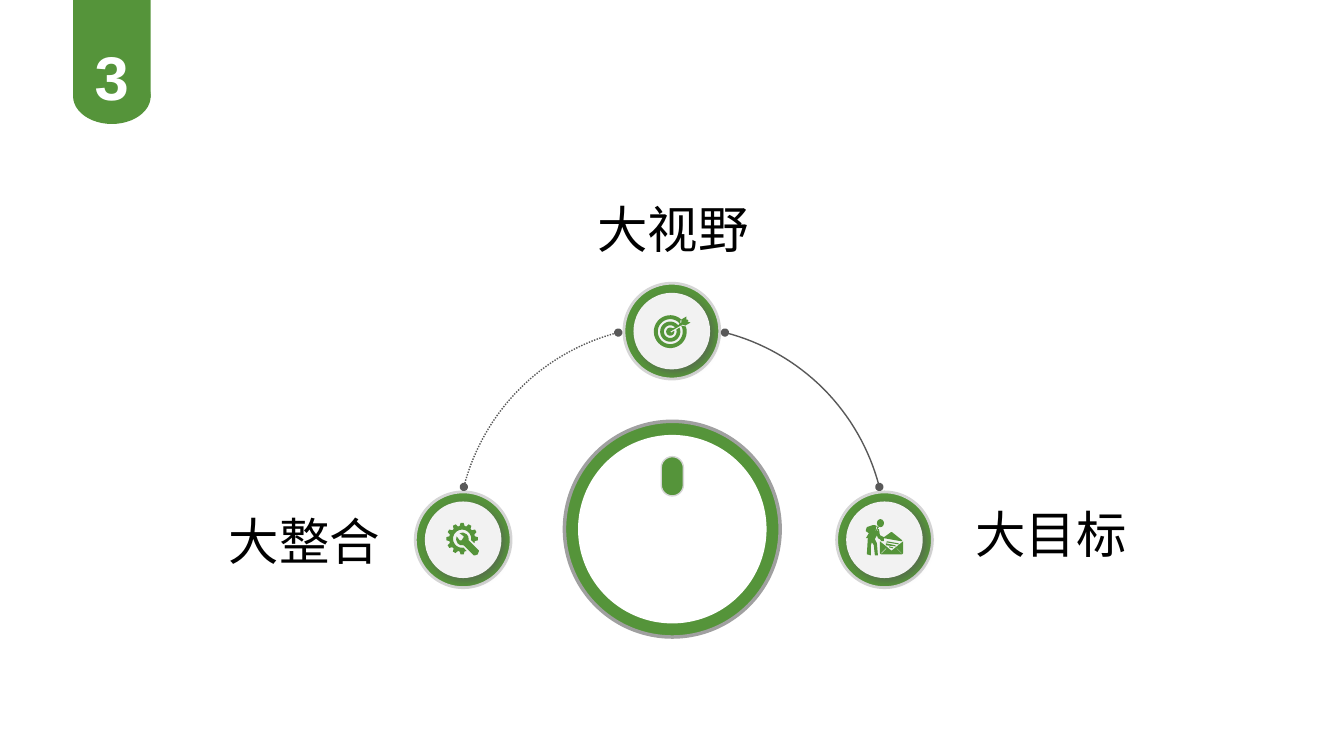
from dataclasses import dataclass
from math import cos, radians, sin

from lxml import etree
from pptx import Presentation
from pptx.dml.color import RGBColor
from pptx.enum.dml import MSO_LINE
from pptx.enum.shapes import MSO_SHAPE
from pptx.enum.text import MSO_AUTO_SIZE, PP_ALIGN
from pptx.oxml.ns import qn
from pptx.util import Pt

OVAL, RECTANGLE, ROUNDED = MSO_SHAPE.OVAL, MSO_SHAPE.RECTANGLE, MSO_SHAPE.ROUNDED_RECTANGLE
LEFT, CENTER, RIGHT = PP_ALIGN.LEFT, PP_ALIGN.CENTER, PP_ALIGN.RIGHT
DOTTED, SOLID = MSO_LINE.ROUND_DOT, MSO_LINE.SOLID
FIT_TEXT = MSO_AUTO_SIZE.SHAPE_TO_FIT_TEXT

COLORS = {
    "green": "55943A", "white": "FFFFFF", "black": "000000", "disc": "F2F2F2",
    "arc": "595959", "hub_edge": "A0A0A0", "node_edge": "D5D5D5",
}
CJK_FONT = "Noto Sans CJK SC"
GRID = 0.72
NODE_SIZE, DISC_SIZE = 68.4, 54.72
ARC_CENTER, ARC_RADIUS = (479.7, 385.9), 153.2

Point = tuple[float, float]
Contour = list[Point]


@dataclass(frozen=True)
class Label:
    text: str
    left: float
    top: float
    width: float
    height: float
    align: PP_ALIGN = LEFT
    spacing: float = 1.0
    size: float = 36
    font: str = CJK_FONT
    color: str = "black"
    bold: bool = False


@dataclass(frozen=True)
class Icon:
    origin: Point
    contours: list[Contour]


@dataclass(frozen=True)
class Arc:
    start: float
    end: float
    dash: MSO_LINE


def arc_points(radius: float, start: float, end: float, steps: int = 32) -> Contour:
    angles = [radians(start + (end - start) * step / steps) for step in range(steps + 1)]
    return [(radius * cos(angle), radius * sin(angle)) for angle in angles]


def polar(radius: float, angle: float) -> Point:
    return radius * cos(radians(angle)), radius * sin(radians(angle))


def gear_contour() -> Contour:
    tooth = [(12.8, 11), (15.7, 5.5), (15.7, -5.5), (12.8, -11)]
    teeth = [polar(radius, offset - 30 * index) for index in range(10) for radius, offset in tooth]
    return [polar(13, 20), *teeth, polar(13, 70), *arc_points(9, 81, 369)]


def target_contour() -> Contour:
    arrow = [(1, 1), (0, 0), (12, -7), (15, -6), (20, -9), (17, -10), (18, -11), (17, -12),
             (16, -12), (16, -15), (11, -12), (11, -9), (10, -8), (10, -11)]
    return [*arc_points(12.4, -29, 318), *arc_points(10, 323, -24), *arc_points(6.3, -18, 319),
            *arc_points(4, 304, -14), *arrow, *arc_points(16.3, 313, -18)]


WRENCH = [(16.5, 12.5), (16.5, 11.5), (6.5, 1.5), (6.2, -2), (4.5, -4.5), (1, -6.2), (-2.5, -5.5),
          (1.5, -2.5), (1.5, -1.5), (-0.5, 1.5), (-2.5, 1.5), (-5.5, -2.5), (-6, 1),
          (-4.5, 4.5), (-2, 6.2), (1.5, 6.5), (11.5, 16.5), (12.5, 16.5), (15.5, 15.5)]
WORKER = [(1, 8), (4, 7), (7, 6), (9, 6), (11, 7), (10, 8), (10, 10), (9, 14), (11, 9), (11, 8),
          (12, 7), (13, 8), (12, 9), (10, 14), (12, 11), (12, 10), (13, 10), (14, 16), (16, 17),
          (18, 18), (25, 13), (26, 13), (36, 21), (36, 22), (35, 22), (18, 19), (18, 22),
          (15, 22), (15, 21), (14, 20), (12, 19), (11, 16), (9, 20), (11, 24), (12, 36), (9, 36),
          (8, 27), (8, 26), (6, 23), (5, 26), (5, 36), (1, 35), (2, 19), (0, 19), (3, 14),
          (0, 12), (0, 11)]
ENVELOPE = [
    [(26, 31), (37, 22), (37, 34), (36, 35), (15, 35), (14, 34), (14, 22), (25, 31)],
    [(30, 29), (35, 34), (36, 34), (31, 29)],
    [(21, 29), (20, 29), (15, 34), (16, 34)],
]
LETTER_LINES = [
    [(21, 22), (32, 24), (33, 25), (32, 25), (20, 23)],
    [(20, 24), (29, 26), (30, 27), (29, 27), (20, 26)],
    [(23, 27), (27, 28), (27, 29), (23, 28)],
]

TARGET_ORIGIN, GEAR_ORIGIN, WORKER_ORIGIN = (478.8, 236.88), (330.12, 384.84), (618.48, 370.8)
ICONS = [
    Icon(TARGET_ORIGIN, [target_contour()]),
    Icon(GEAR_ORIGIN, [gear_contour()]),
    Icon(GEAR_ORIGIN, [WRENCH]),
    Icon(WORKER_ORIGIN, [WORKER]),
    Icon(WORKER_ORIGIN, ENVELOPE),
    *[Icon(WORKER_ORIGIN, [line]) for line in LETTER_LINES],
]
NODE_CENTERS = [(330.84, 385.56), (631.8, 385.56), (479.88, 236.52)]
ARCS = [Arc(194.4, 255.6, DOTTED), Arc(-14.4, -75.6, SOLID)]
LABELS = [
    Label("大视野", 388.08, 125.28, 185.04, 64.08, CENTER, 1.3),
    Label("大目标", 689.76, 355.68, 185.04, 51.12),
    Label("大整合", 93.6, 347.76, 185.04, 64.08, RIGHT, 1.3),
]
NUMBER = Label("3", 60.48, 24.48, 38.88, 60.48, size=44, font="Arial", color="white", bold=True)


def rgb(name: str) -> RGBColor:
    return RGBColor.from_string(COLORS[name])


def add_filled(slide, kind: MSO_SHAPE, center: Point, width: float, height: float,
               fill: str, edge: str = "", edge_width: float = 0):
    left, top = center[0] - width / 2, center[1] - height / 2
    shape = slide.shapes.add_shape(kind, Pt(left), Pt(top), Pt(width), Pt(height))
    shape.shadow.inherit = False
    shape.fill.solid()
    shape.fill.fore_color.rgb = rgb(fill)
    if kind == ROUNDED:
        shape.adjustments[0] = 0.5
    if edge:
        shape.line.color.rgb = rgb(edge)
        shape.line.width = Pt(edge_width)
    else:
        shape.line.fill.background()
    return shape


def add_disc_shadow(shape) -> None:
    effects = shape._element.spPr.find(qn("a:effectLst"))
    shadow = etree.SubElement(effects, qn("a:outerShdw"), blurRad=str(Pt(6)), dist=str(Pt(3)),
                              dir="2700000", algn="tl", rotWithShape="0")
    color = etree.SubElement(shadow, qn("a:srgbClr"), val=COLORS["arc"])
    etree.SubElement(color, qn("a:alpha"), val="64000")


def add_outline(slide, contours: list[Contour], origin: Point, scale: float, close: bool):
    placed = [[(Pt(origin[0] + x * scale), Pt(origin[1] + y * scale)) for x, y in contour]
              for contour in contours]
    builder = slide.shapes.build_freeform(*placed[0][0])
    builder.add_line_segments(placed[0][1:], close=close)
    for contour in placed[1:]:
        builder.move_to(*contour[0])
        builder.add_line_segments(contour[1:], close=close)
    shape = builder.convert_to_shape()
    shape.shadow.inherit = False
    return shape


def add_icon(slide, icon: Icon) -> None:
    shape = add_outline(slide, icon.contours, icon.origin, GRID, True)
    shape.fill.solid()
    shape.fill.fore_color.rgb = rgb("green")
    shape.line.fill.background()


def add_arc(slide, arc: Arc) -> None:
    points = arc_points(ARC_RADIUS, arc.start, arc.end)
    shape = add_outline(slide, [points], ARC_CENTER, 1, False)
    shape.fill.background()
    shape.line.color.rgb = rgb("arc")
    shape.line.width = Pt(1)
    shape.line.dash_style = arc.dash
    line = shape.line._get_or_add_ln()
    for end in ("a:headEnd", "a:tailEnd"):
        etree.SubElement(line, qn(end), type="oval")


def add_label(slide, label: Label) -> None:
    box = slide.shapes.add_textbox(Pt(label.left), Pt(label.top), Pt(label.width), Pt(label.height))
    box.text_frame.word_wrap = True
    box.text_frame.auto_size = FIT_TEXT
    paragraph = box.text_frame.paragraphs[0]
    paragraph.alignment = label.align
    paragraph.line_spacing = label.spacing
    run = paragraph.add_run()
    run.text = label.text
    run.font.size = Pt(label.size)
    run.font.bold = label.bold
    run.font.color.rgb = rgb(label.color)
    run.font.name = label.font
    etree.SubElement(run.font._element, qn("a:ea"), typeface=label.font)


def main() -> None:
    presentation = Presentation()
    presentation.slide_width, presentation.slide_height = Pt(960), Pt(540)
    slide = presentation.slides.add_slide(presentation.slide_layouts[6])
    hub_center = (480.24, 378)
    add_filled(slide, OVAL, hub_center, 154.08, 154.08, "green", "hub_edge", 2.5)
    add_filled(slide, OVAL, hub_center, 134.64, 134.64, "white")
    for center in NODE_CENTERS:
        add_filled(slide, ROUNDED, center, NODE_SIZE, NODE_SIZE, "green", "node_edge", 2)
        add_disc_shadow(add_filled(slide, ROUNDED, center, DISC_SIZE, DISC_SIZE, "disc"))
    for arc in ARCS:
        add_arc(slide, arc)
    for label in LABELS:
        add_label(slide, label)
    add_filled(slide, ROUNDED, (480.24, 340.2), 15.84, 28.08, "green", "node_edge", 1)
    for icon in ICONS:
        add_icon(slide, icon)
    add_filled(slide, OVAL, (628.92, 373.68), 5.04, 5.76, "green")
    add_filled(slide, OVAL, (79.92, 68.76), 55.44, 39.6, "green")
    add_filled(slide, RECTANGLE, (79.92, 34.92), 55.44, 69.84, "green")
    add_label(slide, NUMBER)
    presentation.save("out.pptx")


if __name__ == "__main__":
    main()
